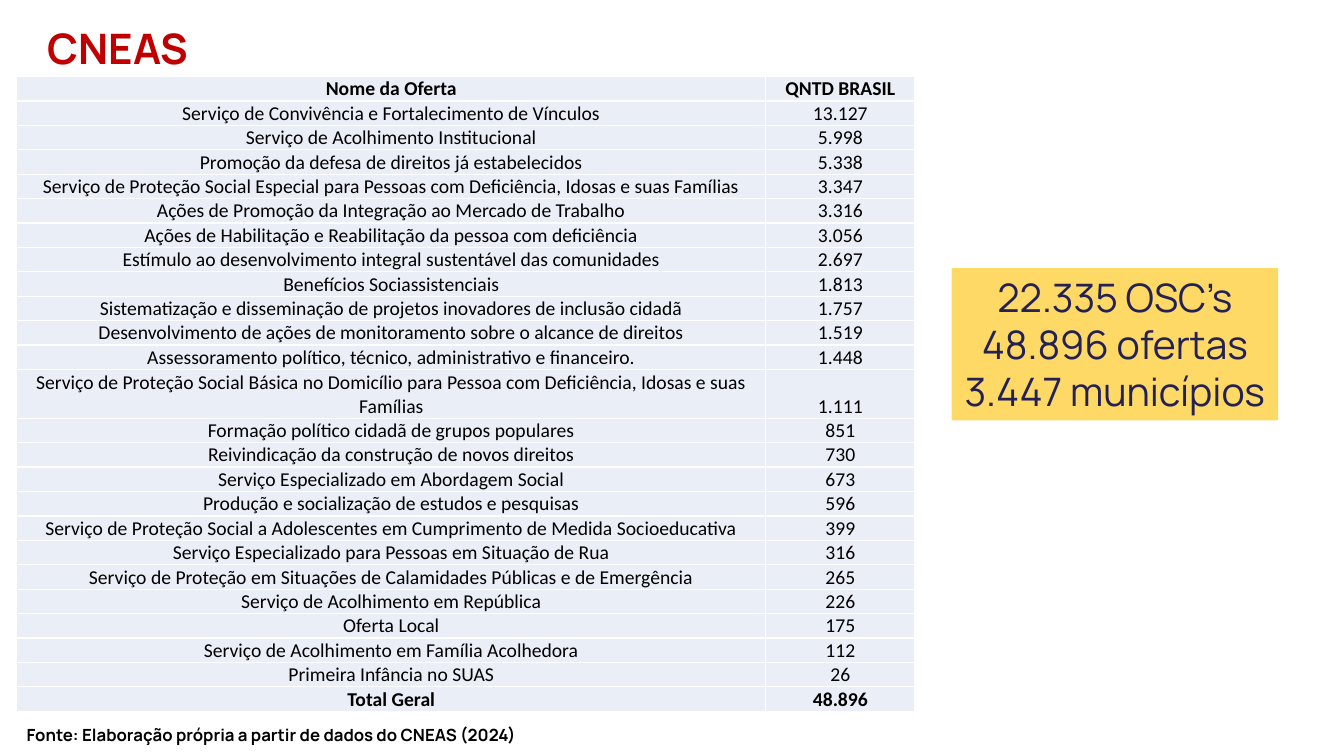
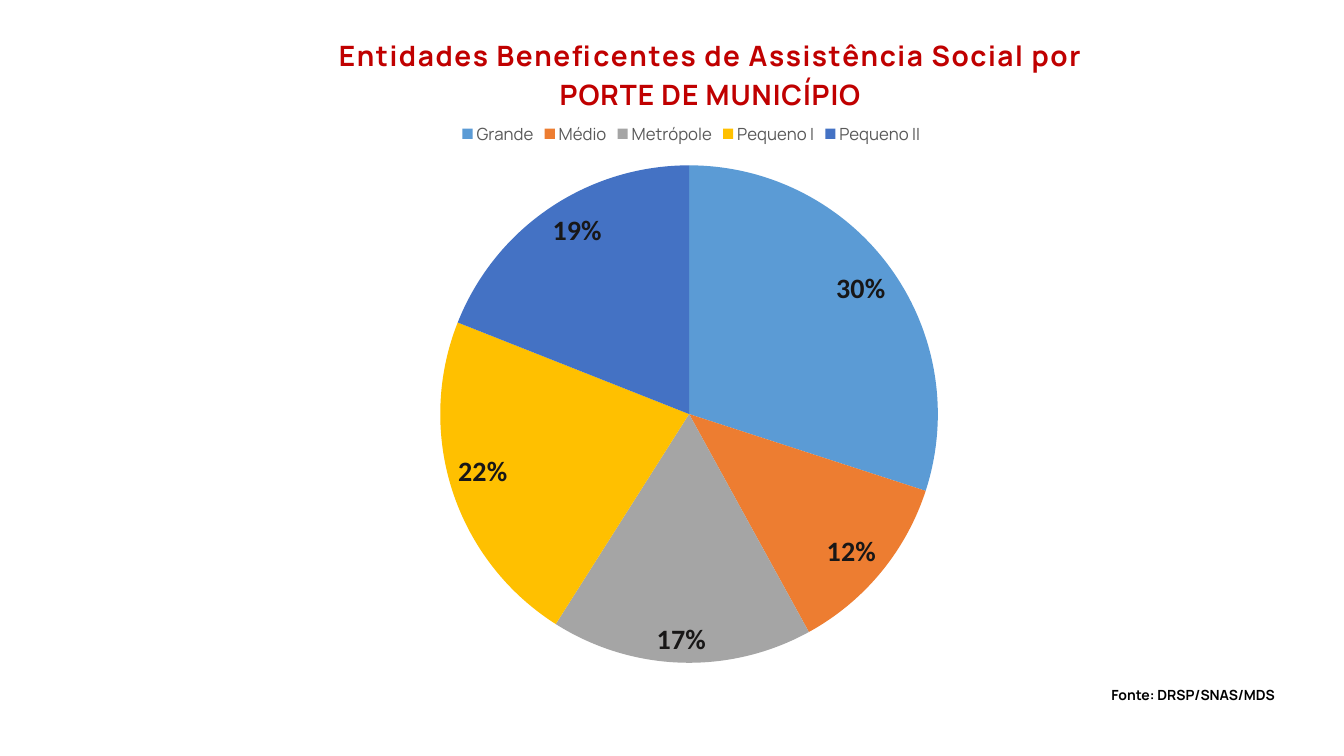
import pptx
import pptx.chart.data
import pptx.dml.color
import pptx.enum.chart
import pptx.enum.shapes
import pptx.enum.text
import pptx.oxml
import pptx.oxml.ns
import pptx.util
from dataclasses import dataclass
from lxml import etree

Pt = pptx.util.Pt
RGB = pptx.dml.color.RGBColor.from_string
ALIGN = pptx.enum.text.PP_ALIGN
ANCHOR = pptx.enum.text.MSO_ANCHOR
qn = pptx.oxml.ns.qn


@dataclass(frozen=True)
class Theme:
    head_font: str = "Manrope"
    body_font: str = "Calibri"
    red: str = "C00000"
    black: str = "000000"
    navy: str = "242254"
    yellow: str = "FFD966"
    cell: str = "EAEFF7"
    border: str = "FFFFFF"
    legend: str = "595959"
    label: str = "181717"
    slices: tuple = ("5B9BD5", "ED7D31", "A5A5A5", "FFC000", "4472C4")
    title: int = 30
    callout: int = 28
    chart_title: int = 20
    table: int = 14
    small: int = 12
    note: int = 10


T = Theme()

prs = pptx.Presentation()
prs.slide_width, prs.slide_height = pptx.util.Inches(13.33), pptx.util.Inches(7.5)
COL, ROW = prs.slide_width / 100, prs.slide_height / 100


def area(left, top, width, height):
    """Turn hundredths of the slide into lengths."""
    return [int(n * unit) for n, unit in zip((left, top, width, height), (COL, ROW) * 2)]


def write(tf, text, size, color, bold=False, font=T.head_font, frame=None, **para):
    """Fill a text frame; frame and para hold further format values."""
    tf.word_wrap = True
    for name, value in (frame or {}).items():
        setattr(tf, name, value)
    p = tf.paragraphs[0]
    for name, value in para.items():
        setattr(p, name, value)
    r = p.add_run()
    r.text = text
    for name, value in dict(size=Pt(size), bold=bold, name=font).items():
        setattr(r.font, name, value)
    r.font.color.rgb = RGB(color)


blank = prs.slide_layouts[6]

# Services table
s = prs.slides.add_slide(blank)
sp = s.shapes.add_textbox(*area(2.4, 2.8, 97.6, 8.13))
side, edge = Pt(10.8), Pt(5.04)
write(sp.text_frame, "CNEAS", T.title, T.red, True, line_spacing=0.9,
      frame=dict(margin_left=side, margin_right=side, margin_top=edge, margin_bottom=edge))
sp = s.shapes.add_textbox(*area(1.25, 95.2, 64.9, 4))
write(sp.text_frame, "Fonte: Elaboração própria a partir de dados do CNEAS (2024)",
      T.small, T.black, True, alignment=ALIGN.JUSTIFY)

offers = [
    ("Nome da Oferta", "QNTD BRASIL"),
    ("Serviço de Convivência e Fortalecimento de Vínculos", "13.127"),
    ("Serviço de Acolhimento Institucional", "5.998"),
    ("Promoção da defesa de direitos já estabelecidos", "5.338"),
    ("Serviço de Proteção Social Especial para Pessoas com Deficiência, Idosas e suas Famílias", "3.347"),
    ("Ações de Promoção da Integração ao Mercado de Trabalho", "3.316"),
    ("Ações de Habilitação e Reabilitação da pessoa com deficiência", "3.056"),
    ("Estímulo ao desenvolvimento integral sustentável das comunidades", "2.697"),
    ("Benefícios Sociassistenciais", "1.813"),
    ("Sistematização e disseminação de projetos inovadores de inclusão cidadã", "1.757"),
    ("Desenvolvimento de ações de monitoramento sobre o alcance de direitos", "1.519"),
    ("Assessoramento político, técnico, administrativo e financeiro.", "1.448"),
    ("Serviço de Proteção Social Básica no Domicílio para Pessoa com Deficiência, Idosas e suas Famílias", "1.111"),
    ("Formação político cidadã de grupos populares", "851"),
    ("Reivindicação da construção de novos direitos", "730"),
    ("Serviço Especializado em Abordagem Social", "673"),
    ("Produção e socialização de estudos e pesquisas", "596"),
    ("Serviço de Proteção Social a Adolescentes em Cumprimento de Medida Socioeducativa", "399"),
    ("Serviço Especializado para Pessoas em Situação de Rua", "316"),
    ("Serviço de Proteção em Situações de Calamidades Públicas e de Emergência", "265"),
    ("Serviço de Acolhimento em República", "226"),
    ("Oferta Local", "175"),
    ("Serviço de Acolhimento em Família Acolhedora", "112"),
    ("Primeira Infância no SUAS", "26"),
    ("Total Geral", "48.896"),
]
widths = (55.73, 11.1)
table_height = 84
line_height = table_height / (len(offers) + 1)  # one name takes two lines
table = s.shapes.add_table(len(offers), 2, *area(1.25, 10.13, sum(widths), table_height)).table
table.first_row = table.horz_banding = False
for column, width in zip(table.columns, widths):
    column.width = int(width * COL)
for i, offer in enumerate(offers):
    lines = 2 if len(offer[0]) > 90 else 1
    table.rows[i].height = int(lines * line_height * ROW)
    for cell, text in zip(table.rows[i].cells, offer):
        cell_format = dict(margin_left=Pt(0.5), margin_right=Pt(0.5), margin_top=Pt(0.5), margin_bottom=0,
                           vertical_anchor=ANCHOR.BOTTOM if i else ANCHOR.MIDDLE)
        for name, value in cell_format.items():
            setattr(cell, name, value)
        tcPr = cell._tc.get_or_add_tcPr()
        for tag in ("a:lnL", "a:lnR", "a:lnT", "a:lnB"):
            ln = etree.SubElement(tcPr, qn(tag), w=str(Pt(1)))
            fill = etree.SubElement(ln, qn("a:solidFill"))
            etree.SubElement(fill, qn("a:srgbClr"), val=T.border)
        cell.fill.solid()
        cell.fill.fore_color.rgb = RGB(T.cell)
        write(cell.text_frame, text, T.table, T.black, i in (0, len(offers) - 1), T.body_font,
              alignment=ALIGN.CENTER)

sp = s.shapes.add_shape(pptx.enum.shapes.MSO_SHAPE.RECTANGLE, *area(70.8, 35.47, 24.3, 20.13))
sp.shadow.inherit = False
sp.fill.solid()
sp.fill.fore_color.rgb = RGB(T.yellow)
sp.line.fill.background()
write(sp.text_frame, "22.335 OSC’s 48.896 ofertas 3.447 municípios", T.callout, T.navy,
      frame=dict(vertical_anchor=ANCHOR.TOP), alignment=ALIGN.CENTER)

# Entities by size of municipality
s = prs.slides.add_slide(blank)
data = pptx.chart.data.CategoryChartData()
data.categories = ["Grande", "Médio", "Metrópole", "Pequeno I", "Pequeno II"]
data.add_series("Series 1", (30, 12, 17, 22, 19))
chart = s.shapes.add_chart(pptx.enum.chart.XL_CHART_TYPE.PIE, *area(13.73, 0.53, 75.08, 88.93), data).chart
chart.font.name, chart.font.size = T.body_font, Pt(T.note)
chart.font.color.rgb = RGB(T.black)

chart.has_title = True
tf = chart.chart_title.text_frame
for i, (text, spacing) in enumerate((("Entidades Beneficentes de Assistência Social por", 100),
                                     ("PORTE DE MUNICÍPIO", 50))):
    p = tf.add_paragraph() if i else tf.paragraphs[0]
    p.alignment = ALIGN.CENTER
    r = p.add_run()
    r.text = text
    for name, value in dict(size=Pt(T.chart_title), bold=True, name=T.head_font).items():
        setattr(r.font, name, value)
    r.font.color.rgb = RGB(T.red)
    r.font._element.set("spc", str(spacing))
chart.chart_title.include_in_layout = False

chart.has_legend = True
legend = chart.legend
legend.position = pptx.enum.chart.XL_LEGEND_POSITION.TOP
legend.include_in_layout = False
legend.font.name, legend.font.size = T.head_font, Pt(T.small)
legend.font.color.rgb = RGB(T.legend)

plot = chart.plots[0]
plot.vary_by_categories = True
for i, color in enumerate(T.slices):
    fill = plot.series[0].points[i].format.fill
    fill.solid()
    fill.fore_color.rgb = RGB(color)
plot.has_data_labels = True
labels = plot.data_labels
label_format = dict(show_percentage=True, show_value=False, number_format="0%", number_format_is_linked=False,
                    position=pptx.enum.chart.XL_LABEL_POSITION.INSIDE_END)
for name, value in label_format.items():
    setattr(labels, name, value)
for name, value in dict(size=Pt(T.chart_title), bold=True, name=T.body_font).items():
    setattr(labels.font, name, value)
labels.font.color.rgb = RGB(T.label)

# Places inside the chart, as shares of its size
places = {
    "c:title": dict(x=0.15, y=0.04),
    "c:legend": dict(x=0.27, y=0.17),
    "c:plotArea": dict(x=0.25, y=0.24, w=0.5, h=0.74),
}
for tag, place in places.items():
    part = chart._chartSpace.chart.find(qn(tag))
    layout = part.find(qn("c:layout"))
    if layout is None:
        layout = pptx.oxml.parse_xml(f'<c:layout {pptx.oxml.ns.nsdecls("c")}/>')
        part.insert(0 if tag == "c:plotArea" else 1, layout)
    manual = etree.SubElement(layout, qn("c:manualLayout"))
    if "w" in place:
        etree.SubElement(manual, qn("c:layoutTarget"), val="inner")
    for mode in ("c:xMode", "c:yMode"):
        etree.SubElement(manual, qn(mode), val="edge")
    for name, value in place.items():
        etree.SubElement(manual, qn(f"c:{name}"), val=str(value))

sp = s.shapes.add_textbox(*area(78.83, 89.47, 19.88, 3.2))
write(sp.text_frame, "Fonte: DRSP/SNAS/MDS", T.note, T.black, True, alignment=ALIGN.CENTER,
      line_spacing=Pt(19.2), frame=dict(margin_left=0, margin_right=0, margin_top=0, margin_bottom=0))

prs.save("out.pptx")
